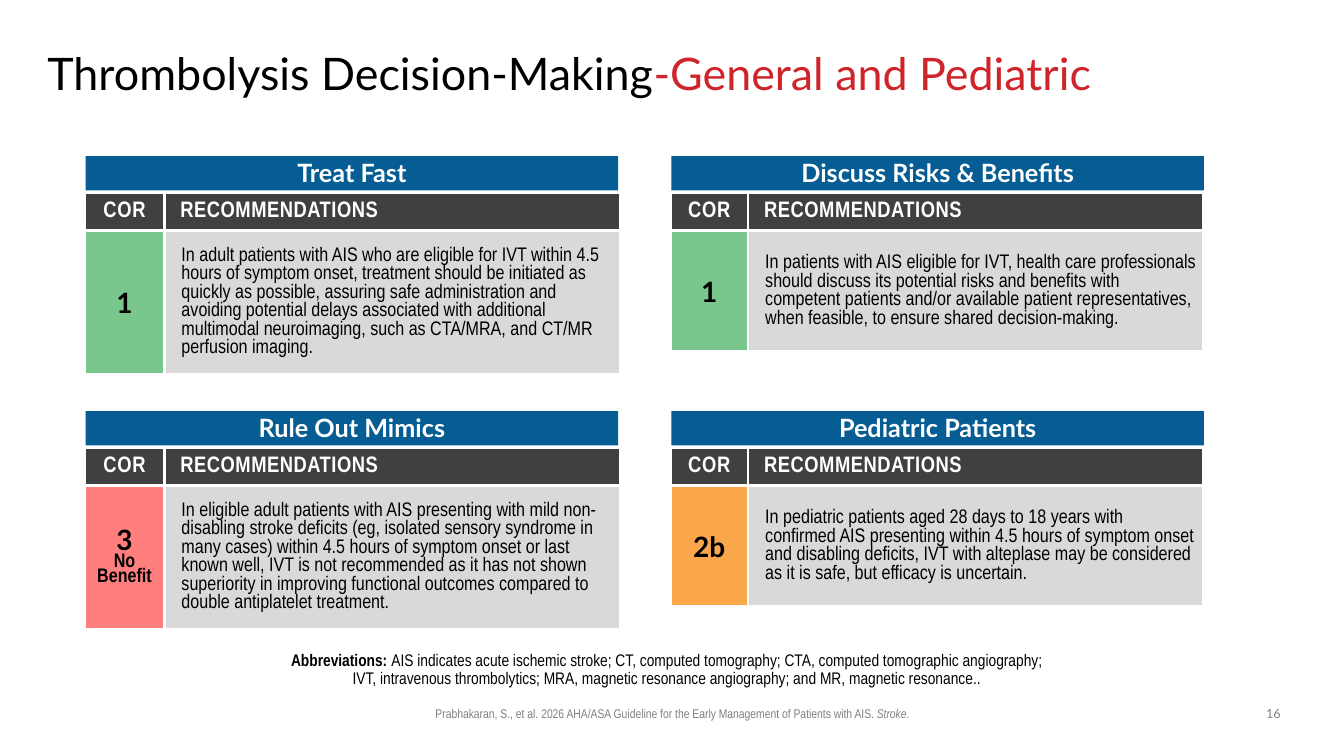
from lxml import etree
from pptx import Presentation
from pptx import util as u
from pptx.dml.color import RGBColor
from pptx.enum import shapes, text
from pptx.oxml.ns import qn

COLORS = {
    "black": "000000", "white": "FFFFFF", "red": "CF242A", "blue": "065D93",
    "dark": "404040", "light": "D9D9D9", "muted": "808080",
    "strong": "79C78D", "weak": "FAA74B", "no_benefit": "FF7F7F",
}
HEADING, NARROW = "Lato", "Arial Narrow"
CENTER, LEFT = text.PP_ALIGN.CENTER, text.PP_ALIGN.LEFT
MIDDLE, BOTTOM = text.MSO_ANCHOR.MIDDLE, text.MSO_ANCHOR.BOTTOM
CELL_INSETS = (0.05,) * 4

# Left edge of each card column and the width of its COR column
COLUMNS = [(0.85, 0.79), (6.66, 0.77)]
ROW_TOPS = [1.55, 4.08]
BAR_WIDTH, RECOMMENDATION_WIDTH = 5.28, 4.52

# Column, row, heading, COR lines, COR colour, body height, recommendation
CARDS = [
    (0, 0, "Treat Fast", ["1"], "strong", 1.42,
     "In adult patients with AIS who are eligible for IVT within 4.5 hours of symptom onset, "
     "treatment should be initiated as quickly as possible, assuring safe administration and "
     "avoiding potential delays associated with additional multimodal neuroimaging, such as "
     "CTA/MRA, and CT/MR perfusion imaging."),
    (1, 0, "Discuss Risks & Benefits", ["1"], "strong", 1.2,
     "In patients with AIS eligible for IVT, health care professionals should discuss its "
     "potential risks and benefits with competent patients and/or available patient "
     "representatives, when feasible, to ensure shared decision-making."),
    (0, 1, "Rule Out Mimics", ["3", "No Benefit"], "no_benefit", 1.42,
     "In eligible adult patients with AIS presenting with mild non-disabling stroke deficits "
     "(eg, isolated sensory syndrome in many cases) within 4.5 hours of symptom onset or last "
     "known well, IVT is not recommended as it has not shown superiority in improving "
     "functional outcomes compared to double antiplatelet treatment."),
    (1, 1, "Pediatric Patients", ["2b"], "weak", 1.2,
     "In pediatric patients aged 28 days to 18 years with confirmed AIS presenting within 4.5 "
     "hours of symptom onset and disabling deficits, IVT with alteplase may be considered as "
     "it is safe, but efficacy is uncertain."),
]


def color(name):
    return RGBColor.from_string(COLORS[name])


def add_span(para, words, size=14, font=NARROW, fill="black", bold=False, italic=False,
             spacing=0):
    span = para.add_run()
    span.text = words
    span.font.size = u.Pt(size)
    span.font.name = font
    span.font.bold = bold
    span.font.italic = italic
    span.font.color.rgb = color(fill)
    if spacing:
        span._r.get_or_add_rPr().set("spc", str(int(spacing * 100)))


def set_para(para, align=LEFT, line=None, before=0, after=0, indent=0):
    para.alignment = align
    para.line_spacing = line
    para.space_before = u.Pt(before)
    para.space_after = u.Pt(after)
    if indent:
        properties = para._p.get_or_add_pPr()
        properties.set("marL", str(u.Inches(indent)))
        properties.set("indent", "0")
    return para


def set_insets(target, insets):
    (target.margin_left, target.margin_top,
     target.margin_right, target.margin_bottom) = map(u.Inches, insets)


class Slide:
    def __init__(self, deck):
        self.page = deck.slides.add_slide(deck.slide_layouts[5])

    def frame(self, shape, anchor, insets):
        frame = shape.text_frame
        frame.word_wrap = True
        frame.auto_size = text.MSO_AUTO_SIZE.NONE
        frame.vertical_anchor = anchor
        set_insets(frame, insets)
        return frame.paragraphs[0]

    def title(self, left, top, width, height):
        box = self.page.shapes.title
        box.left, box.top, box.width, box.height = map(u.Inches, (left, top, width, height))
        return set_para(self.frame(box, MIDDLE, (0, 0, 0, 0)), line=0.9)

    def text(self, left, top, width, height, anchor=text.MSO_ANCHOR.TOP,
             insets=(0.1, 0.05, 0.1, 0.05), line=None):
        box = self.page.shapes.add_textbox(*map(u.Inches, (left, top, width, height)))
        return set_para(self.frame(box, anchor, insets), CENTER, line)

    def bar(self, left, top, width, height, fill):
        box = self.page.shapes.add_shape(
            shapes.MSO_SHAPE.RECTANGLE, *map(u.Inches, (left, top, width, height)))
        box.shadow.inherit = False
        box.fill.solid()
        box.fill.fore_color.rgb = color(fill)
        box.line.fill.background()

    def table(self, left, top, widths, heights):
        table = self.page.shapes.add_table(
            len(heights), len(widths),
            *map(u.Inches, (left, top, sum(widths), sum(heights)))).table
        for column, width in zip(table.columns, widths):
            column.width = u.Inches(width)
        for row, height in zip(table.rows, heights):
            row.height = u.Inches(height)
        return table

    def cell(self, cell, fill, insets=(0.1, 0.05, 0.1, 0.05)):
        properties = cell._tc.get_or_add_tcPr()
        for side in ("a:lnL", "a:lnR", "a:lnT", "a:lnB"):
            border = etree.SubElement(properties, qn(side), w=str(u.Pt(2.25)))
            solid = etree.SubElement(border, qn("a:solidFill"))
            etree.SubElement(solid, qn("a:srgbClr"), val=COLORS["white"])
        cell.fill.solid()
        cell.fill.fore_color.rgb = color(fill)
        cell.vertical_anchor = MIDDLE
        set_insets(cell, insets)
        return cell.text_frame

    def card(self, column, row, heading, cor, cor_fill, body_height, recommendation):
        left, cor_width = COLUMNS[column]
        top = ROW_TOPS[row]

        # Heading bar
        self.bar(left, top, BAR_WIDTH, 0.34, "blue")
        para = self.text(left, top + 0.04, BAR_WIDTH, 0.27, MIDDLE, (0, 0, 0, 0), 0.9)
        add_span(para, heading, 18, HEADING, "white", bold=True)

        # Table header
        table = self.table(left - 0.01, top + 0.36, (cor_width, RECOMMENDATION_WIDTH),
                           (0.38, body_height))
        headers = [("COR", CENTER, 0, 0.5), ("RECOMMENDATIONS", LEFT, 0.06, 0.4)]
        for index, (label, align, indent, spacing) in enumerate(headers):
            para = self.cell(table.cell(0, index), "dark").paragraphs[0]
            set_para(para, align, before=2.8, indent=indent)
            add_span(para, label, 16, fill="white", bold=True, spacing=spacing)

        # Class of recommendation, with an optional qualifier below
        frame = self.cell(table.cell(1, 0), cor_fill, CELL_INSETS)
        stacked = len(cor) > 1
        for index, label in enumerate(cor):
            para = frame.add_paragraph() if index else frame.paragraphs[0]
            set_para(para, CENTER, 0.8 if stacked else None, 0 if stacked else 3)
            size, font = (14, NARROW) if index else (20, HEADING)
            add_span(para, label, size, font, bold=True)

        # Recommendation
        para = self.cell(table.cell(1, 1), "light", CELL_INSETS).paragraphs[0]
        add_span(set_para(para, before=6, after=6, indent=0.12), recommendation)


def main():
    deck = Presentation()
    deck.slide_width, deck.slide_height = u.Inches(13.33), u.Inches(7.5)
    slide = Slide(deck)

    # Title
    para = slide.title(0.47, 0.31, 11.83, 0.88)
    add_span(para, "Thrombolysis Decision-Making", 32, HEADING)
    add_span(para, "-General and Pediatric", 32, HEADING, "red")

    for card in CARDS:
        slide.card(*card)

    # Abbreviations
    para = slide.text(1.88, 6.42, 9.57, 0.46, BOTTOM, (0, 0.05, 0.1, 0.05), 0.9)
    add_span(para, "Abbreviations: ", 12, bold=True)
    add_span(para, "AIS indicates acute ischemic stroke; CT, computed tomography; "
                   "CTA, computed tomographic angiography;", 12)
    para.add_line_break()
    add_span(para, "IVT, intravenous thrombolytics; MRA, magnetic resonance angiography; "
                   "and MR, magnetic resonance..", 12)

    # Citation and page number
    para = slide.text(2.36, 6.95, 8.62, 0.25)
    add_span(para, "Prabhakaran, S., et al. 2026 AHA/ASA Guideline for the Early Management "
                   "of Patients with AIS. ", 9, fill="muted")
    add_span(para, "Stroke", 9, fill="muted", italic=True)
    add_span(para, ".", 9, fill="muted")
    add_span(slide.text(12.42, 6.95, 0.42, 0.26), "16", 9, HEADING, "muted")

    deck.save("out.pptx")


if __name__ == "__main__":
    main()
